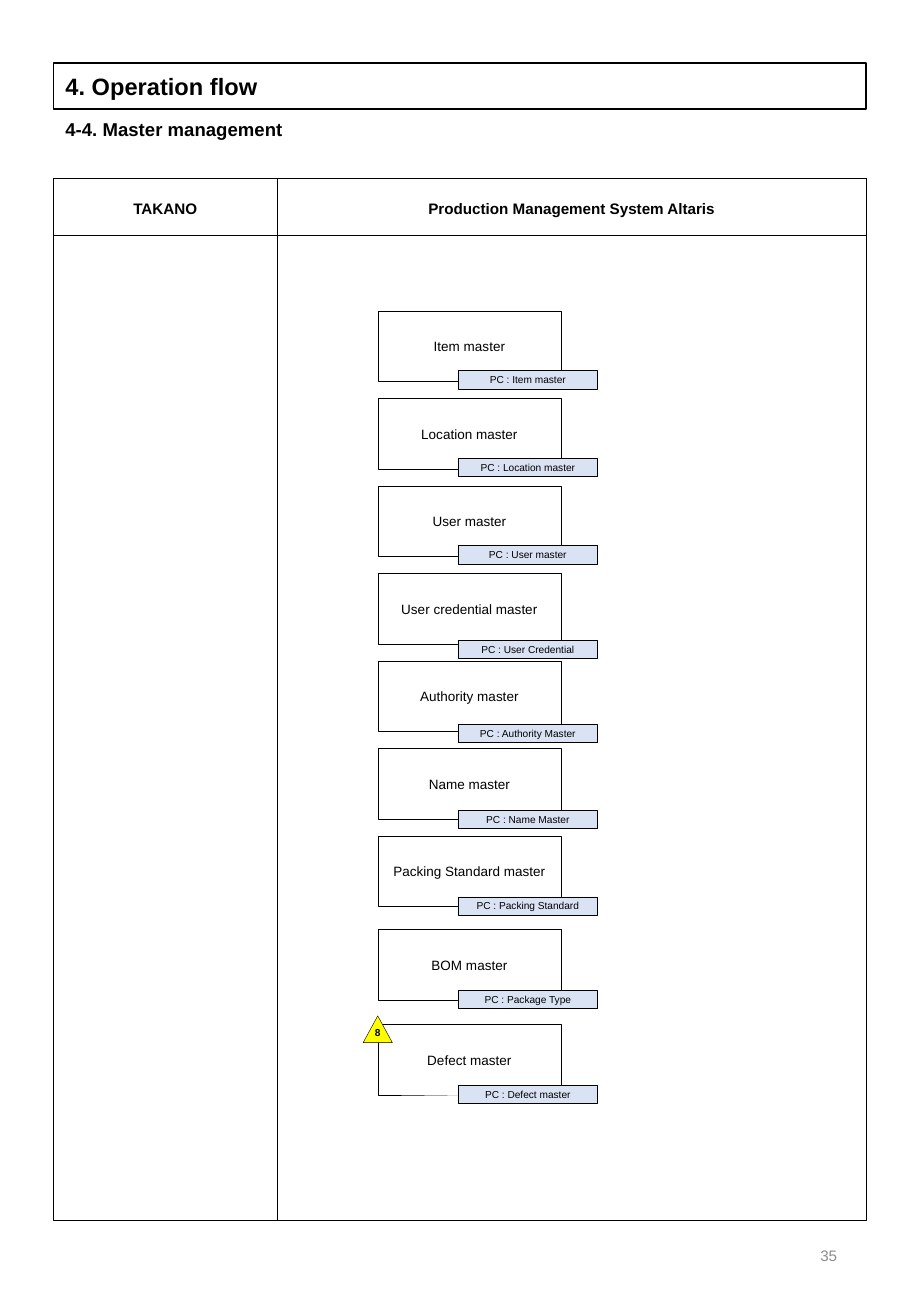
from dataclasses import dataclass

from lxml import etree
from pptx import Presentation
from pptx.dml.color import RGBColor
from pptx.enum.shapes import MSO_CONNECTOR, MSO_SHAPE
from pptx.enum.text import MSO_ANCHOR, PP_ALIGN
from pptx.oxml.ns import qn
from pptx.util import Inches, Pt

RECT = MSO_SHAPE.RECTANGLE
TRIANGLE = MSO_SHAPE.ISOSCELES_TRIANGLE
STRAIGHT = MSO_CONNECTOR.STRAIGHT
LEFT, CENTER, RIGHT = PP_ALIGN.LEFT, PP_ALIGN.CENTER, PP_ALIGN.RIGHT
TOP, MIDDLE = MSO_ANCHOR.TOP, MSO_ANCHOR.MIDDLE


@dataclass(frozen=True)
class Theme:
    font: str = "Arial"
    ink: str = "000000"
    muted: str = "8C8C8C"
    screen_fill: str = "DAE3F3"
    marker_fill: str = "FFFF00"
    title: float = 14
    subtitle: float = 11
    header: float = 9
    master: float = 8
    small: float = 6
    thick: float = 1
    divider: float = 0.5
    thin: float = 0.25


THEME = Theme()
PAGE = (7.5, 10.83)
MARGIN, CONTENT_WIDTH = 0.44, 6.69
HEADER_HEIGHT, COMPANY_LANE_WIDTH = 0.47, 1.84
MASTER_SIZE = (1.51, 0.58)
MASTER_PITCH = 0.72
SCREEN_SIZE = (1.15, 0.15)
SCREEN_INDENT = 0.66

MASTERS = [
    ("Item master", "PC : Item master", 0.49),
    ("Location master", "PC : Location master", 0.49),
    ("User master", "PC : User master", 0.49),
    ("User credential master", "PC : User Credential", 0.55),
    ("Authority master", "PC : Authority Master", 0.52),
    ("Name master", "PC : Name Master", 0.51),
    ("Packing Standard master", "PC : Packing Standard", 0.5),
]
LATE_MASTERS = [
    ("BOM master", "PC : Package Type", 0.5),
    ("Defect master", "PC : Defect master", 0.5),
]


def write(owner, text, size, bold=False, color=THEME.ink, align=CENTER,
          anchor=MIDDLE, wrap=True, margins=(0.1, 0.05, 0.1, 0.05)):
    frame = owner.text_frame
    left, top, right, bottom = map(Inches, margins)
    frame_format = {
        "word_wrap": wrap, "vertical_anchor": anchor, "margin_left": left,
        "margin_top": top, "margin_right": right, "margin_bottom": bottom,
    }
    for key, value in frame_format.items():
        setattr(frame, key, value)
    paragraph = frame.paragraphs[0]
    paragraph.alignment = align
    run = paragraph.add_run()
    run.text = text
    for key, value in {"name": THEME.font, "size": Pt(size), "bold": bold}.items():
        setattr(run.font, key, value)
    run.font.color.rgb = RGBColor.from_string(color)


def add_label(slide, box, text, size, **style):
    label = slide.shapes.add_textbox(*map(Inches, box))
    write(label, text, size, **style)


def add_outline(slide, box, kind=RECT, fill=None, weight=THEME.thin):
    outline = slide.shapes.add_shape(kind, *map(Inches, box))
    outline.shadow.inherit = False
    if fill:
        outline.fill.solid()
        outline.fill.fore_color.rgb = RGBColor.from_string(fill)
    else:
        outline.fill.background()
    outline.line.color.rgb = RGBColor.from_string(THEME.ink)
    outline.line.width = Pt(weight)
    return outline


def add_heading(slide, box):
    left, top, width, height = box
    title = add_outline(slide, (left, top, width, 0.38), weight=THEME.thick)
    write(title, "4. Operation flow", THEME.title, bold=True, align=LEFT)
    add_label(slide, (left, top + 0.4, width, height - 0.4), "4-4. Master management",
              THEME.subtitle, bold=True, align=LEFT, anchor=TOP)


def add_lanes(slide, box):
    left, top, width, height = box
    add_outline(slide, box)
    add_outline(slide, (left, top, width, HEADER_HEIGHT))
    split = left + COMPANY_LANE_WIDTH
    divider = slide.shapes.add_connector(
        STRAIGHT, *map(Inches, (split, top, split, top + height)))
    divider.line.color.rgb = RGBColor.from_string(THEME.ink)
    divider.line.width = Pt(THEME.divider)
    etree.SubElement(divider.element.spPr, qn("a:effectLst"))
    lanes = [
        ("TAKANO", left, COMPANY_LANE_WIDTH),
        ("Production Management System Altaris", split, width - COMPANY_LANE_WIDTH),
    ]
    for name, lane_left, lane_width in lanes:
        add_label(slide, (lane_left, top + 0.01, lane_width, HEADER_HEIGHT),
                  name, THEME.header, bold=True)


def add_masters(slide, box, masters, pitch):
    left, top, width, height = box
    for index, (name, screen_name, drop) in enumerate(masters):
        row_top = top + index * pitch
        master = add_outline(slide, (left, row_top, width, height))
        write(master, name, THEME.master)
        screen = add_outline(
            slide, (left + SCREEN_INDENT, row_top + drop, *SCREEN_SIZE),
            fill=THEME.screen_fill)
        write(screen, screen_name, THEME.small)


def add_marker(slide, box, number):
    marker = add_outline(slide, box, TRIANGLE, THEME.marker_fill)
    write(marker, number, THEME.small, bold=True, wrap=False,
          margins=(0.1, 0, 0.1, 0.05))


def main():
    deck = Presentation()
    deck.slide_width, deck.slide_height = map(Inches, PAGE)
    slide = deck.slides.add_slide(deck.slide_layouts[6])
    add_heading(slide, (MARGIN, 0.52, CONTENT_WIDTH, 0.69))
    add_lanes(slide, (MARGIN, 1.47, CONTENT_WIDTH, 8.57))
    add_masters(slide, (3.11, 2.56, *MASTER_SIZE), MASTERS, MASTER_PITCH)
    add_masters(slide, (3.11, 7.65, *MASTER_SIZE), LATE_MASTERS, 0.78)
    add_marker(slide, (2.99, 8.36, 0.24, 0.22), "8")
    add_label(slide, (5.3, 10.04, 1.69, 0.58), "35", THEME.header,
              color=THEME.muted, align=RIGHT)
    deck.save("out.pptx")


if __name__ == "__main__":
    main()
